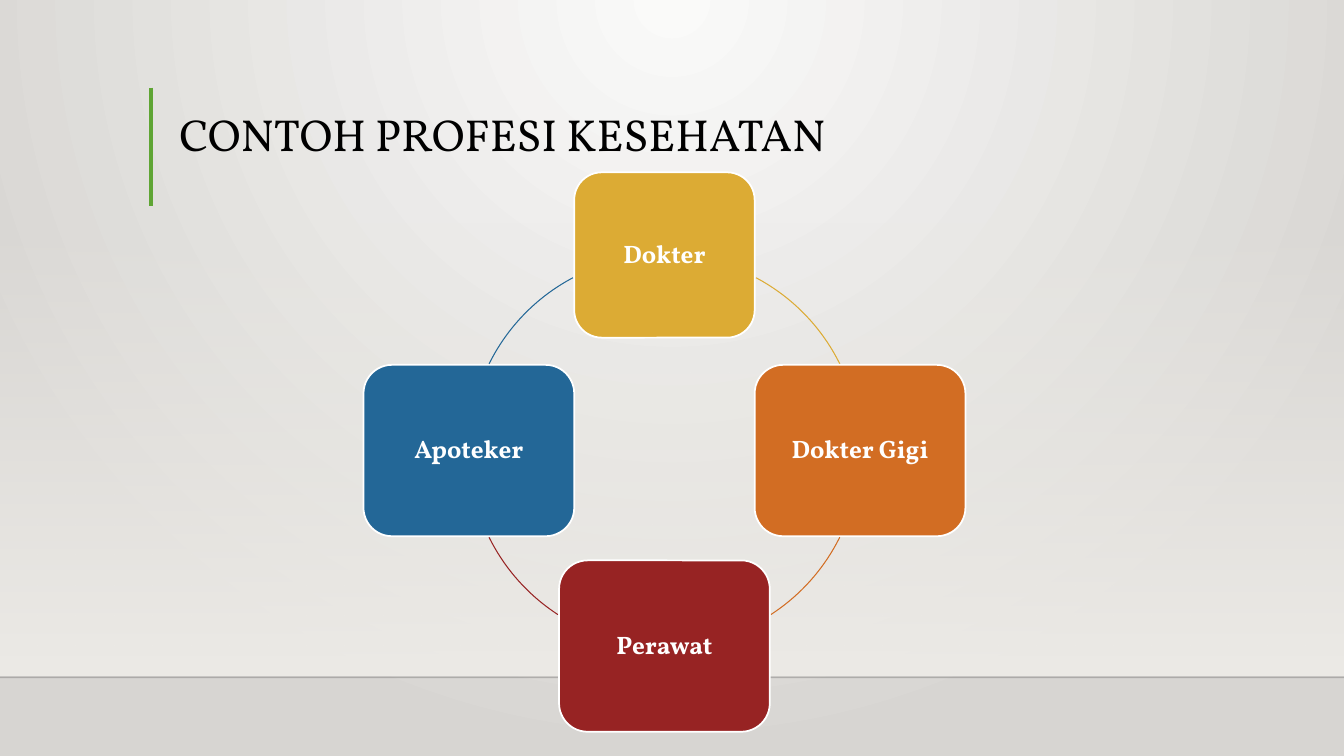
"""Builds a slide with a cycle of four health professions."""
from lxml.etree import SubElement
from pptx import Presentation
from pptx.dml.color import RGBColor
from pptx.enum.shapes import MSO_CONNECTOR as Link, MSO_SHAPE as Shape
from pptx.enum.text import MSO_ANCHOR as Anchor, MSO_AUTO_SIZE as AutoSize, PP_ALIGN as Align
from pptx.oxml.ns import qn
from pptx.util import Inches, Pt


def paint(target, color):
    if hasattr(target, "solid"):
        target.solid()
        target = target.fore_color
    target.rgb = RGBColor.from_string(color)


def write(box, text, size=18, color="FFFFFF", bold=False, align=Align.CENTER,
          anchor=Anchor.MIDDLE, inset=0.1):
    frame = box.text_frame
    frame.word_wrap = True
    frame.auto_size = AutoSize.NONE
    frame.vertical_anchor = anchor
    frame.margin_left = frame.margin_right = Inches(inset)
    frame.margin_top = frame.margin_bottom = Inches(0.05)
    para = frame.paragraphs[0]
    para.alignment = align
    para.line_spacing = 0.9
    span = para.add_run()
    span.text = text
    span.font.name = "Vollkorn"
    span.font.size = Pt(size)
    span.font.bold = bold
    paint(span.font.fill, color)


deck = Presentation()
deck.slide_width, deck.slide_height = Inches(13.33), Inches(7.5)
page = deck.slides.add_slide(deck.slide_layouts[5])

backdrop = page.background.fill
backdrop.gradient()
for stop, color in zip(backdrop.gradient_stops, ("FAFAF9", "D7D5D2")):
    paint(stop.color, color)
gradient = page.element.find(".//" + qn("a:gradFill"))
gradient.remove(gradient.find(qn("a:lin")))
glow = SubElement(gradient, qn("a:path"), path="circle")
SubElement(glow, qn("a:fillToRect"), l="43000", t="0", r="43000", b="100000")

wall = page.shapes.add_shape(Shape.RECTANGLE, 0, Inches(2.2), Inches(13.33), Inches(4.5))
wall.shadow.inherit = False
wall.line.fill.background()
wall.fill.gradient()
wall.fill.gradient_angle = 270
for stop in wall.fill.gradient_stops:
    paint(stop.color, "EDEBE7")
clear_color = wall.element.find(".//" + qn("a:srgbClr"))
SubElement(clear_color, qn("a:alpha"), val="0")

for x1, y1, x2, y2, color, width, opacity in (
        (0, 6.72, 13.33, 6.72, "000001", 1, 20),
        (1.5, 0.87, 1.5, 2.04, "5FA534", 3, 100)):
    rule = page.shapes.add_connector(
        Link.STRAIGHT, Inches(x1), Inches(y1), Inches(x2), Inches(y2))
    paint(rule.line.fill, color)
    rule.line.width = Pt(width)
    rule_color = rule.element.find(".//" + qn("a:srgbClr"))
    SubElement(rule_color, qn("a:alpha"), val=str(opacity * 1000))
    SubElement(rule.element.spPr, qn("a:effectLst"))

title = page.shapes.title
title.left, title.top = Inches(1.68), Inches(0.49)
title.width, title.height = Inches(10.41), Inches(1.16)
write(title, "CONTOH PROFESI KESEHATAN", size=32, color="000000",
      align=Align.LEFT, anchor=Anchor.BOTTOM)

center_x, center_y, radius = 6.59, 4.47, 1.94
professions = (
    ("Dokter", "DCAB34", 0, -1, 1.79, 1.64, 297.9, 333.7),
    ("Dokter Gigi", "D26D23", 1, 0, 2.09, 1.7, 26.3, 57),
    ("Perawat", "972323", 0, 1, 2.09, 1.7, 123, 153.7),
    ("Apoteker", "236797", -1, 0, 2.09, 1.7, 206.3, 242.1),
)
for name, color, across, down, width, height, start, end in professions:
    card = page.shapes.add_shape(
        Shape.ROUNDED_RECTANGLE,
        Inches(center_x + across * radius - width / 2),
        Inches(center_y + down * radius - height / 2),
        Inches(width), Inches(height))
    card.shadow.inherit = False
    paint(card.fill, color)
    paint(card.line.fill, "FFFFFF")
    card.line.width = Pt(1.25)
    write(card, name, bold=True, inset=0.07)

    arc = page.shapes.add_shape(
        Shape.ARC, Inches(center_x - radius), Inches(center_y - radius),
        Inches(2 * radius), Inches(2 * radius))
    arc.shadow.inherit = False
    arc.fill.background()
    paint(arc.line.fill, color)
    arc.line.width = Pt(0.75)
    arc.adjustments[0] = start * 0.6
    arc.adjustments[1] = end * 0.6

deck.save("out.pptx")
